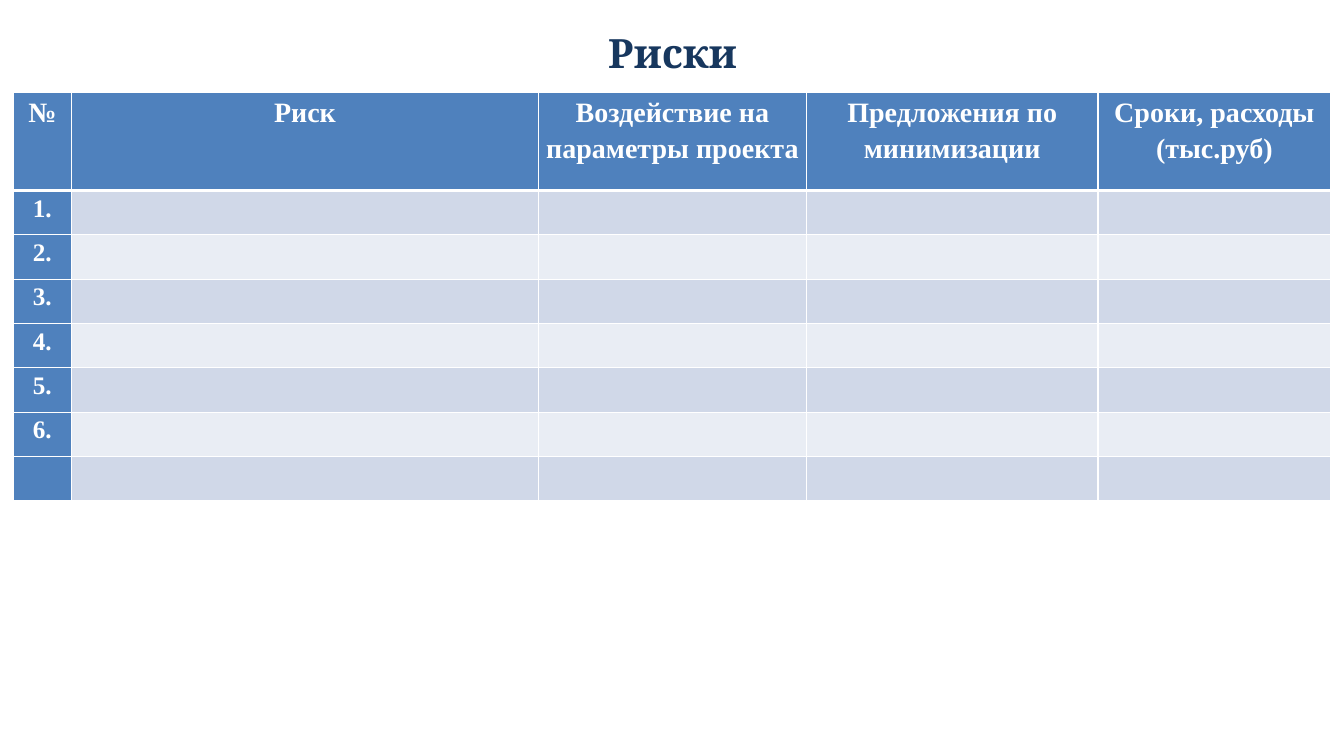
"""Build the project risk table slide."""
from dataclasses import dataclass

import pptx
import pptx.dml.color
import pptx.enum.text
import pptx.oxml
import pptx.oxml.ns
import pptx.slide
import pptx.table
import pptx.text.text
import pptx.util
from pptx.dml.color import RGBColor
from pptx.util import Inches

NAVY = RGBColor(0x17, 0x37, 0x5E)
BLUE = RGBColor(0x4F, 0x81, 0xBD)
DARK_BAND = RGBColor(0xD0, 0xD8, 0xE8)
LIGHT_BAND = RGBColor(0xE9, 0xED, 0xF4)
WHITE = RGBColor(0xFF, 0xFF, 0xFF)

HEADER_HEIGHT = 0.97
ROW_HEIGHT = 0.44
ROW_LABELS = [f"{number}." for number in range(1, 7)] + [""]


@dataclass(frozen=True)
class Column:
    heading: str
    width: float


COLUMNS = [
    Column("№", 0.58),
    Column("Риск", 4.63),
    Column("Воздействие на параметры проекта", 2.66),
    Column("Предложения по минимизации", 2.89),
    Column("Сроки, расходы (тыс.руб)", 2.31),
]


def style_paragraph(paragraph: pptx.text.text._Paragraph, font: str, size: float, color: RGBColor) -> None:
    paragraph.alignment = pptx.enum.text.PP_ALIGN.CENTER
    paragraph.font.name = font
    paragraph.font.size = pptx.util.Pt(size)
    paragraph.font.bold = True
    paragraph.font.color.rgb = color


def add_title(slide: pptx.slide.Slide, text: str) -> None:
    frame = slide.shapes.add_textbox(Inches(0.67), Inches(0.21), Inches(12), Inches(0.61)).text_frame
    frame.word_wrap = True
    frame.vertical_anchor = pptx.enum.text.MSO_ANCHOR.MIDDLE
    frame.text = text
    style_paragraph(frame.paragraphs[0], "Cambria", 28.8, NAVY)


def set_borders(cell: pptx.table._Cell, top: float, bottom: float) -> None:
    properties = cell._tc.get_or_add_tcPr()
    for side, points in {"L": 1, "R": 1, "T": top, "B": bottom}.items():
        properties.append(pptx.oxml.parse_xml(
            f'<a:ln{side} {pptx.oxml.ns.nsdecls("a")} w="{pptx.util.Pt(points)}">'
            f'<a:solidFill><a:srgbClr val="{WHITE}"/></a:solidFill></a:ln{side}>'
        ))


def fill_cell(cell: pptx.table._Cell, color: RGBColor) -> None:
    cell.fill.solid()
    cell.fill.fore_color.rgb = color


def write_label(cell: pptx.table._Cell, text: str, size: float) -> None:
    cell.margin_left = cell.margin_right = Inches(0.07)
    cell.margin_top = cell.margin_bottom = 0
    cell.text = text
    paragraph = cell.text_frame.paragraphs[0]
    paragraph.line_spacing = 1.15
    style_paragraph(paragraph, "Times New Roman", size, WHITE)


def add_risk_table(slide: pptx.slide.Slide) -> None:
    width = sum(column.width for column in COLUMNS)
    height = HEADER_HEIGHT + ROW_HEIGHT * len(ROW_LABELS)
    table = slide.shapes.add_table(
        len(ROW_LABELS) + 1, len(COLUMNS), Inches(0.13), Inches(0.92), Inches(width), Inches(height)
    ).table
    table.first_col = True
    table.horz_banding = False

    for index, column in enumerate(COLUMNS):
        table.columns[index].width = Inches(column.width)
        cell = table.cell(0, index)
        set_borders(cell, top=1, bottom=3)
        fill_cell(cell, BLUE)
        write_label(cell, column.heading, 20)
    table.rows[0].height = Inches(HEADER_HEIGHT)

    for row, label in enumerate(ROW_LABELS, start=1):
        table.rows[row].height = Inches(ROW_HEIGHT)
        band = DARK_BAND if row % 2 else LIGHT_BAND
        for index in range(len(COLUMNS)):
            cell = table.cell(row, index)
            set_borders(cell, top=3 if row == 1 else 1, bottom=1)
            fill_cell(cell, band if index else BLUE)
        write_label(table.cell(row, 0), label, 18)


def main() -> None:
    presentation = pptx.Presentation()
    presentation.slide_width = Inches(13.33)
    presentation.slide_height = Inches(7.5)
    slide = presentation.slides.add_slide(presentation.slide_layouts[6])
    add_title(slide, "Риски")
    add_risk_table(slide)
    presentation.save("out.pptx")


if __name__ == "__main__":
    main()
